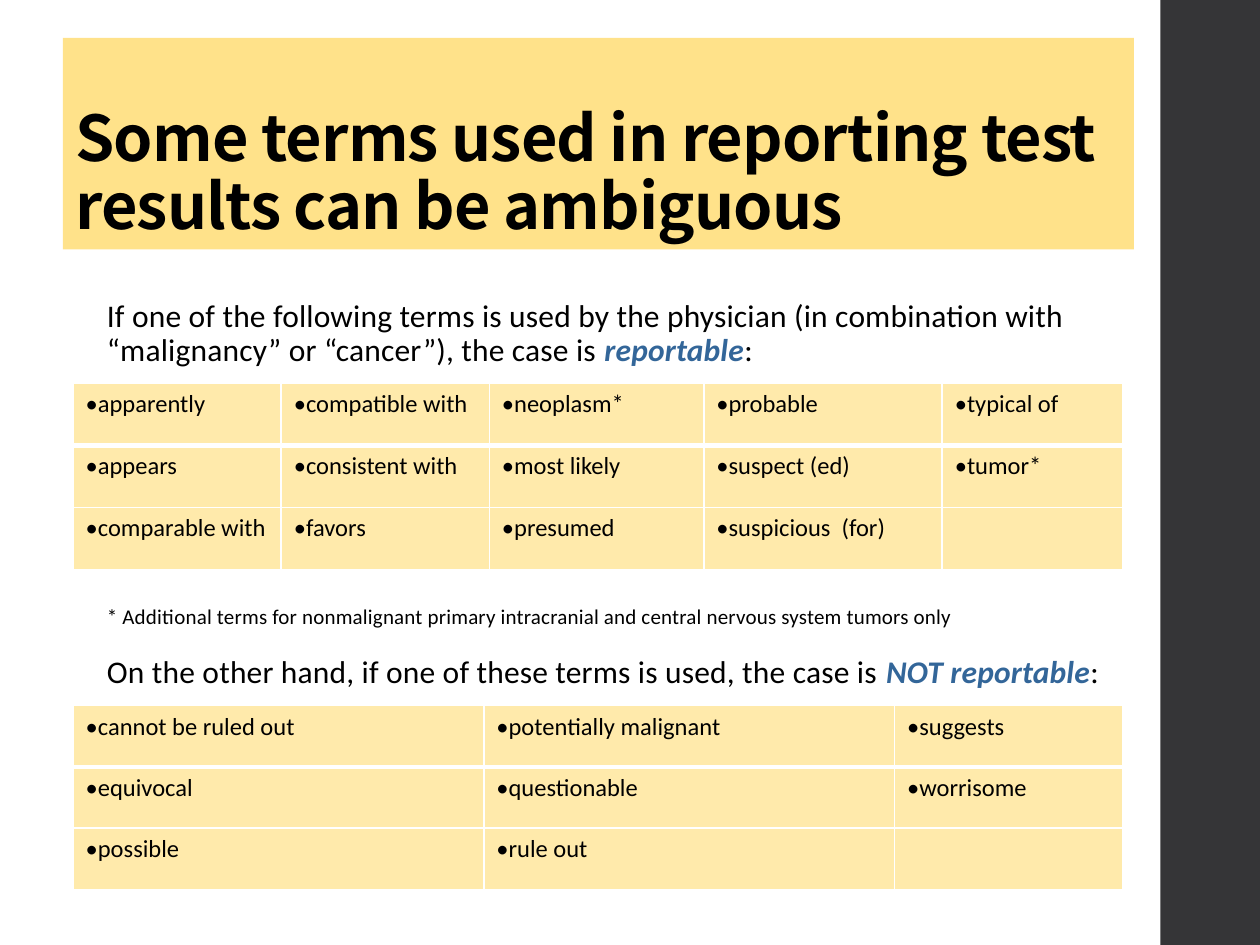
from lxml import etree
from pptx import Presentation
from pptx.dml.color import RGBColor
from pptx.enum.shapes import MSO_SHAPE
from pptx.enum.text import MSO_ANCHOR, PP_ALIGN
from pptx.oxml.ns import qn
from pptx.util import Inches, Pt

RECTANGLE = MSO_SHAPE.RECTANGLE
BOTTOM = MSO_ANCHOR.BOTTOM
LEFT = PP_ALIGN.LEFT

COLORS = {
    "text": "000000",
    "emphasis": "336699",
    "amber": "FFC000",
    "sidebar": "353537",
    "border": "FFFFFF",
}
BODY_FONT = "Calibri"
TITLE_FONT = "Noto Sans CJK KR"

REPORTABLE_TERMS = [
    ["apparently", "compatible with", "neoplasm*", "probable", "typical of"],
    ["appears", "consistent with", "most likely", "suspect (ed)", "tumor*"],
    ["comparable with", "favors", "presumed", "suspicious  (for)", ""],
]
NOT_REPORTABLE_TERMS = [
    ["cannot be ruled out", "potentially malignant", "suggests"],
    ["equivocal", "questionable", "worrisome"],
    ["possible", "rule out", ""],
]


def rgb(name):
    return RGBColor.from_string(COLORS[name])


def fill_solid(fill, color, opacity=100):
    fill.solid()
    fill.fore_color.rgb = rgb(color)
    if opacity < 100:
        color_element = fill._xPr.find(qn("a:solidFill"))[0]
        etree.SubElement(color_element, qn("a:alpha"), val=str(opacity * 1000))


def style_font(font, name, size, bold=None):
    font.name = name
    font.size = Pt(size)
    font.bold = bold
    font.color.rgb = rgb("text")


def set_letter_spacing(run, points):
    run._r.get_or_add_rPr().set("spc", str(round(points * 100)))


def add_rectangle(slide, left, top, width, height, color, opacity=100):
    shape = slide.shapes.add_shape(
        RECTANGLE, Inches(left), Inches(top), Inches(width), Inches(height))
    shape.shadow.inherit = False
    fill_solid(shape.fill, color, opacity)
    shape.line.fill.background()
    return shape


def add_title(slide, text):
    shape = add_rectangle(slide, 0.5, 0.3, 8.5, 1.68, "amber", 46)
    frame = shape.text_frame
    frame.word_wrap = True
    frame.vertical_anchor = BOTTOM
    paragraph = frame.paragraphs[0]
    paragraph.alignment = LEFT
    paragraph.line_spacing = 0.9
    paragraph.space_after = Pt(4)
    style_font(paragraph.font, TITLE_FONT, 36, bold=True)
    run = paragraph.add_run()
    run.text = text
    set_letter_spacing(run, -0.5)


def add_statement(slide, top, height, size, text, emphasis="", ending=""):
    """Add a line of body text, optionally closing with an emphasised term."""
    box = slide.shapes.add_textbox(
        Inches(0.75), Inches(top), Inches(8.25), Inches(height))
    box.text_frame.word_wrap = True
    paragraph = box.text_frame.paragraphs[0]
    paragraph.line_spacing = 0.9
    style_font(paragraph.font, BODY_FONT, size)
    for part in filter(None, (text, emphasis, ending)):
        run = paragraph.add_run()
        run.text = part
        set_letter_spacing(run, 0.1)
        if part == emphasis:
            run.font.bold = run.font.italic = True
            run.font.color.rgb = rgb("emphasis")


def set_cell_borders(cell, widths):
    """Draw borders; widths maps each side (L, R, T, B) to points."""
    properties = cell._tc.get_or_add_tcPr()
    for index, (side, width) in enumerate(widths.items()):
        line = etree.Element(qn(f"a:ln{side}"), w=str(Pt(width)))
        solid = etree.SubElement(line, qn("a:solidFill"))
        etree.SubElement(solid, qn("a:srgbClr"), val=COLORS["border"])
        properties.insert(index, line)


def add_bullet(paragraph):
    properties = paragraph._p.get_or_add_pPr()
    properties.set("marL", "0")
    properties.set("indent", "0")
    properties.insert(0, etree.Element(qn("a:buFont"), typeface=BODY_FONT))
    properties.insert(1, etree.Element(qn("a:buChar"), char="•"))


def add_term_table(slide, top, height, column_shares, terms):
    """Add a table whose columns share its width in the given proportions."""
    width = Inches(8.33)
    frame = slide.shapes.add_table(
        len(terms), len(column_shares), Inches(0.58), Inches(top),
        width, Inches(height))
    table = frame.table
    for column, share in zip(table.columns, column_shares):
        column.width = round(width * share / sum(column_shares))
    for row_index, row in enumerate(terms):
        for column_index, term in enumerate(row):
            cell = table.cell(row_index, column_index)
            fill_solid(cell.fill, "amber", 33)
            set_cell_borders(cell, {
                "L": 1, "R": 1,
                "T": 3 if row_index == 1 else 1,
                "B": 3 if row_index == 0 else 1,
            })
            paragraph = cell.text_frame.paragraphs[0]
            paragraph.alignment = LEFT
            style_font(paragraph.font, BODY_FONT, 14, bold=False)
            if term:
                paragraph.add_run().text = term
                add_bullet(paragraph)


def main():
    presentation = Presentation()
    presentation.slide_width = Inches(10)
    presentation.slide_height = Inches(7.5)
    slide = presentation.slides.add_slide(presentation.slide_layouts[6])

    add_rectangle(slide, 9.21, 0, 0.8, 7.5, "sidebar")
    add_title(slide, "Some terms used in reporting test results can be ambiguous")
    add_statement(
        slide, 2.33, 0.65, 18,
        "If one of the following terms is used by the physician (in combination "
        "with “malignancy” or “cancer”), the case is ", "reportable", ":")
    add_term_table(slide, 3.04, 1.48, [1.65, 1.65, 1.7, 1.89, 1.43],
                   REPORTABLE_TERMS)
    add_statement(
        slide, 4.76, 0.3, 12,
        "* Additional terms for nonmalignant primary intracranial and central "
        "nervous system tumors only")
    add_statement(
        slide, 5.16, 0.4, 18,
        "On the other hand, if one of these terms is used, the case is ",
        "NOT reportable", ":")
    add_term_table(slide, 5.6, 1.46, [3.26, 3.26, 1.81], NOT_REPORTABLE_TERMS)

    presentation.save("out.pptx")


if __name__ == "__main__":
    main()
